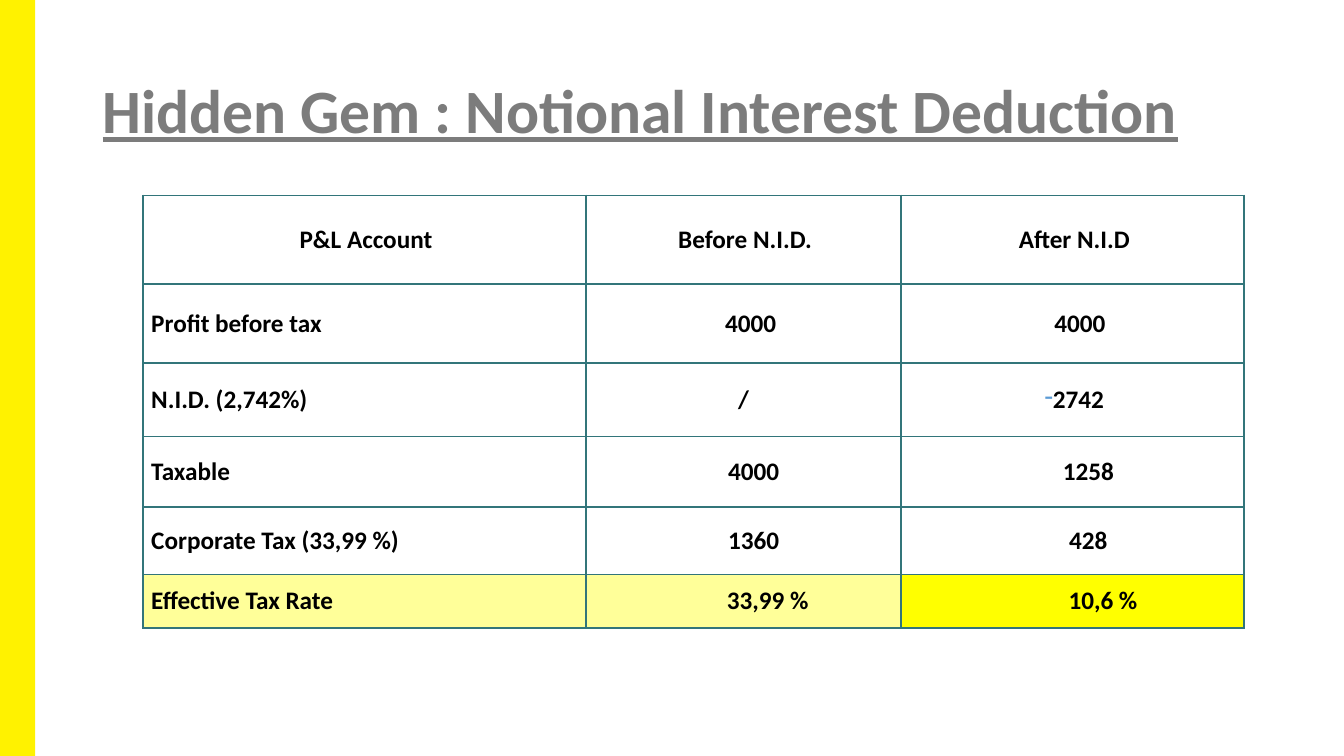
from dataclasses import dataclass

from lxml import etree
from pptx import Presentation
from pptx.dml.color import RGBColor
from pptx.enum.shapes import MSO_SHAPE
from pptx.enum.text import MSO_ANCHOR, PP_ALIGN
from pptx.oxml.ns import qn
from pptx.util import Inches, Pt

RECT = MSO_SHAPE.RECTANGLE
MIDDLE = MSO_ANCHOR.MIDDLE
LEFT, CENTER = PP_ALIGN.LEFT, PP_ALIGN.CENTER


@dataclass(frozen=True)
class Theme:
    """Colours, font and sizes of the slide."""
    font: str = "Calibri"
    band: str = "FFF200"
    title: str = "7C7C7C"
    text: str = "000000"
    border: str = "32757A"
    dash: str = "5B9BD5"
    pale: str = "FFFF99"
    bright: str = "FFFF00"
    title_size: int = 44
    cell_size: int = 18
    border_width: float = 1.5


THEME = Theme()
COLS = [4.39, 3.13, 3.4]
ROWS = [0.88, 0.78, 0.73, 0.7, 0.67, 0.53]
ACCOUNT = [
    ["P&L Account", "Before N.I.D.", "After N.I.D"],
    ["Profit before tax", "4000", "4000"],
    ["N.I.D. (2,742%)", "/", "2742"],
    ["Taxable", "4000", "1258"],
    ["Corporate Tax (33,99 %)", "1360", "428"],
    ["Effective Tax Rate", "33,99 %", "10,6 %"],
]
INDENTS = [
    [0.03, 0.03, 0.03],
    [0.03, 0.14, 0.14],
    [0.03, 0, 0.03],
    [0.03, 0.2, 0.31],
    [0.03, 0.2, 0.31],
    [0.03, 0.48, 0.6],
]
DASHED = (2, 2)
RATE_FILLS = [THEME.pale, THEME.pale, THEME.bright]


def rgb(value):
    """Turn a hex value into a colour."""
    return RGBColor.from_string(value)


def write(p, text, size, color, **formats):
    """Write one bold run in a paragraph."""
    r = p.add_run()
    r.text = text
    r.font.color.rgb = rgb(color)
    formats = {"name": THEME.font, "size": Pt(size), "bold": True, **formats}
    for name, value in formats.items():
        setattr(r.font, name, value)


def add_band(s, x, y, w, h):
    """Draw the coloured band at the slide's edge."""
    band = s.shapes.add_shape(RECT, Inches(x), Inches(y), Inches(w), Inches(h))
    band.shadow.inherit = False
    band.fill.solid()
    band.fill.fore_color.rgb = rgb(THEME.band)
    band.line.fill.background()


def add_title(s, text, x, y, w, h):
    """Place the underlined title in its box."""
    box = s.shapes.add_textbox(Inches(x), Inches(y), Inches(w), Inches(h))
    tf = box.text_frame
    tf.word_wrap = True
    tf.vertical_anchor = MIDDLE
    p = tf.paragraphs[0]
    p.line_spacing = 0.9
    write(p, text, THEME.title_size, THEME.title, underline=True)


def add_borders(cell):
    """Draw all four borders of a cell."""
    tc_pr = cell._tc.get_or_add_tcPr()
    for side in ("lnL", "lnR", "lnT", "lnB"):
        ln = etree.SubElement(tc_pr, qn(f"a:{side}"), w=str(Pt(THEME.border_width)))
        fill = etree.SubElement(ln, qn("a:solidFill"))
        etree.SubElement(fill, qn("a:srgbClr"), val=THEME.border)


def add_dash(p):
    """Give a paragraph a coloured dash as its bullet."""
    p_pr = p._p.get_or_add_pPr()
    color = etree.SubElement(p_pr, qn("a:buClr"))
    etree.SubElement(color, qn("a:srgbClr"), val=THEME.dash)
    etree.SubElement(p_pr, qn("a:buChar"), char="-")


def fill_cell(cell, text, align, indent, fill, dashed):
    """Format one table cell and write its text."""
    formats = {"margin_left": 0.05, "margin_right": 0.05,
               "margin_top": 0.04, "margin_bottom": 0.04}
    for name, value in formats.items():
        setattr(cell, name, Inches(value))
    cell.vertical_anchor = MIDDLE
    add_borders(cell)
    if fill:
        cell.fill.solid()
        cell.fill.fore_color.rgb = rgb(fill)
    else:
        cell.fill.background()
    p = cell.text_frame.paragraphs[0]
    p.alignment = align
    p_pr = p._p.get_or_add_pPr()
    p_pr.set("marL", str(Inches(indent)))
    p_pr.set("indent", "0")
    if dashed:
        add_dash(p)
    write(p, text, THEME.cell_size, THEME.text)


def add_account(s, x, y):
    """Build the profit and loss table from its top left corner."""
    frame = s.shapes.add_table(len(ROWS), len(COLS), Inches(x), Inches(y),
                               Inches(sum(COLS)), Inches(sum(ROWS)))
    table = frame.table
    table.first_row = table.horz_banding = False
    for col, width in zip(table.columns, COLS):
        col.width = Inches(width)
    for i, height in enumerate(ROWS):
        table.rows[i].height = Inches(height)
        for j, text in enumerate(ACCOUNT[i]):
            align = LEFT if i and not j else CENTER
            fill = RATE_FILLS[j] if i == len(ROWS) - 1 else None
            fill_cell(table.cell(i, j), text, align, INDENTS[i][j], fill,
                      (i, j) == DASHED)


def main():
    """Build and save the slide."""
    prs = Presentation()
    prs.slide_width, prs.slide_height = Inches(13.33), Inches(7.5)
    s = prs.slides.add_slide(prs.slide_layouts[6])
    add_band(s, 0, 0, 0.35, 7.5)
    add_title(s, "Hidden Gem : Notional Interest Deduction", 0.92, 0.4, 11.5, 1.45)
    add_account(s, 1.42, 1.94)
    prs.save("out.pptx")


if __name__ == "__main__":
    main()
